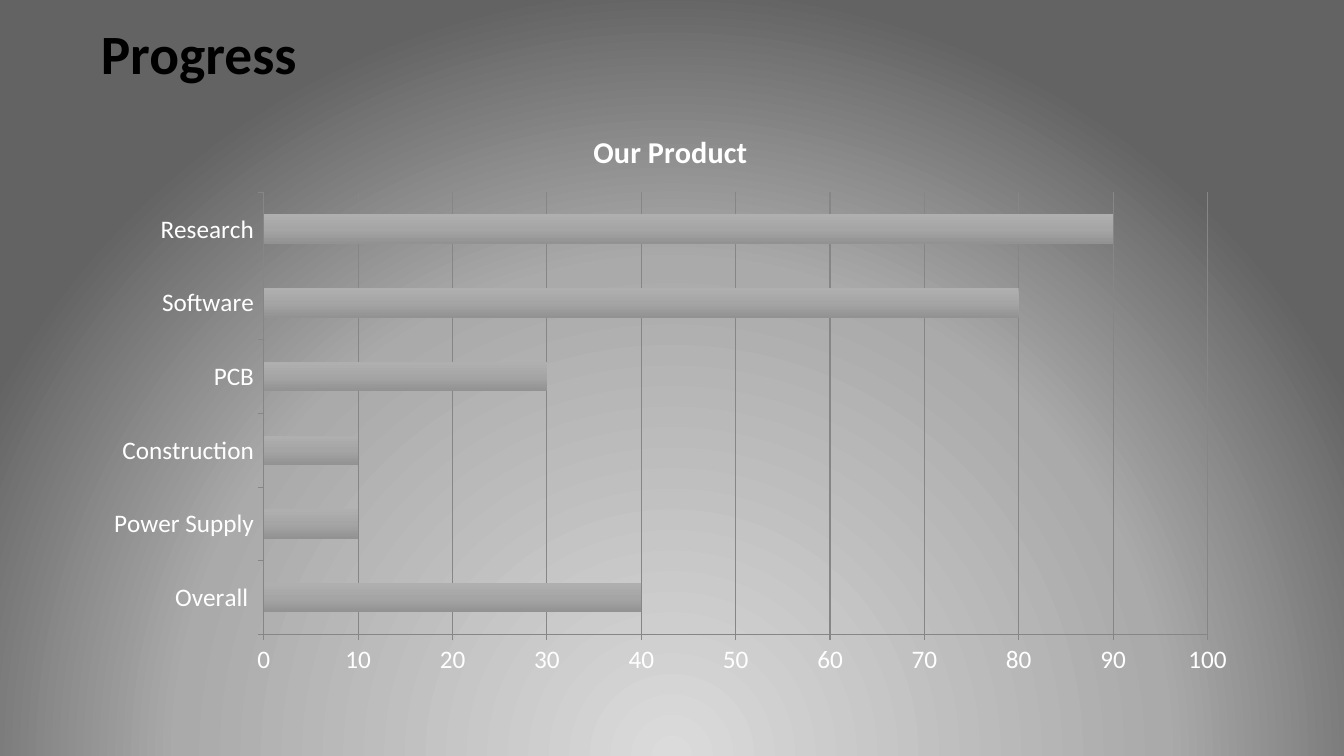
from dataclasses import dataclass
from typing import Any

from lxml import etree
from pptx import Presentation
from pptx import util as u
from pptx.chart import data
from pptx.dml import color
from pptx.enum import chart as ch, text
from pptx.oxml import ns, parse_xml

FACE = "Calibri"
WHITE = "FFFFFF"
GREY = "868686"


@dataclass(frozen=True)
class Stop:
    place: int
    tint: str


@dataclass(frozen=True)
class Task:
    name: str
    done: int


GLOW = [Stop(0, "DBDBDB"), Stop(64, "AAAAAA"), Stop(100, "636363")]
BAR = [Stop(0, "AFAFAF"), Stop(50, "A5A5A5"), Stop(100, "929292")]
TASKS = [
    Task("Overall ", 40),
    Task("Power Supply", 10),
    Task("Construction", 10),
    Task("PCB", 30),
    Task("Software", 80),
    Task("Research", 90),
]
ROUND = (
    f'<a:path {ns.nsdecls("a")} path="circle">'
    '<a:fillToRect l="50000" t="130000" r="50000" b="-30000"/></a:path>'
)
DOWN = f'<a:lin {ns.nsdecls("a")} ang="5400000" scaled="0"/>'


def rgb(tint: str) -> color.RGBColor:
    return color.RGBColor.from_string(tint)


def style(font: Any, size: float, tint: str, bold: bool) -> None:
    font.name = FACE
    font.size = u.Pt(size)
    font.bold = bold
    font.color.rgb = rgb(tint)


def shade(fill: Any, root: Any, stops: list[Stop], course: str) -> None:
    fill.gradient()
    grad = next(root.iter(ns.qn("a:gradFill")))
    grad.clear()
    grad.set("rotWithShape", "1")
    row = etree.SubElement(grad, ns.qn("a:gsLst"))
    for stop in stops:
        mark = etree.SubElement(row, ns.qn("a:gs"), pos=str(stop.place * 1000))
        etree.SubElement(mark, ns.qn("a:srgbClr"), val=stop.tint)
    grad.append(parse_xml(course))


def rule(line: Any) -> None:
    line.color.rgb = rgb(GREY)
    line.width = u.Pt(0.75)


def head(slide: Any) -> None:
    box = slide.shapes.add_textbox(u.Cm(2.29), u.Cm(0.53), u.Cm(29.21), u.Cm(1.78))
    frame = box.text_frame
    frame.word_wrap = True
    frame.vertical_anchor = text.MSO_ANCHOR.MIDDLE
    para = frame.paragraphs[0]
    para.text = "Progress"
    para.line_spacing = 0.9
    style(para.font, 39.6, "000000", True)


def graph(slide: Any) -> None:
    feed = data.CategoryChartData()
    feed.categories = [task.name for task in TASKS]
    feed.add_series("Series 1", [task.done for task in TASKS])
    chart = slide.shapes.add_chart(
        ch.XL_CHART_TYPE.BAR_CLUSTERED,
        u.Cm(2.29), u.Cm(2.72), u.Cm(29.21), u.Cm(14.58), feed,
    ).chart
    style(chart.font, 18, WHITE, False)
    chart.has_legend = False
    chart.has_title = True
    para = chart.chart_title.text_frame.paragraphs[0]
    para.text = "Our Product"
    style(para.font, 21.6, WHITE, True)

    plot = chart.plots[0]
    plot.gap_width = 150
    plot.vary_by_categories = False
    shade(plot.series[0].format.fill, chart.element, BAR, DOWN)

    for axis in (chart.category_axis, chart.value_axis):
        axis.major_tick_mark = ch.XL_TICK_MARK.OUTSIDE
        axis.minor_tick_mark = ch.XL_TICK_MARK.NONE
        rule(axis.format.line)
    scale = chart.value_axis
    scale.minimum_scale, scale.maximum_scale, scale.major_unit = 0, 100, 10
    scale.has_major_gridlines = True
    rule(scale.major_gridlines.format.line)


def main() -> None:
    deck = Presentation()
    deck.slide_width, deck.slide_height = u.Cm(33.87), u.Cm(19.05)
    slide = deck.slides.add_slide(deck.slide_layouts[6])
    shade(slide.background.fill, slide.element, GLOW, ROUND)
    head(slide)
    graph(slide)
    deck.save("out.pptx")


if __name__ == "__main__":
    main()
